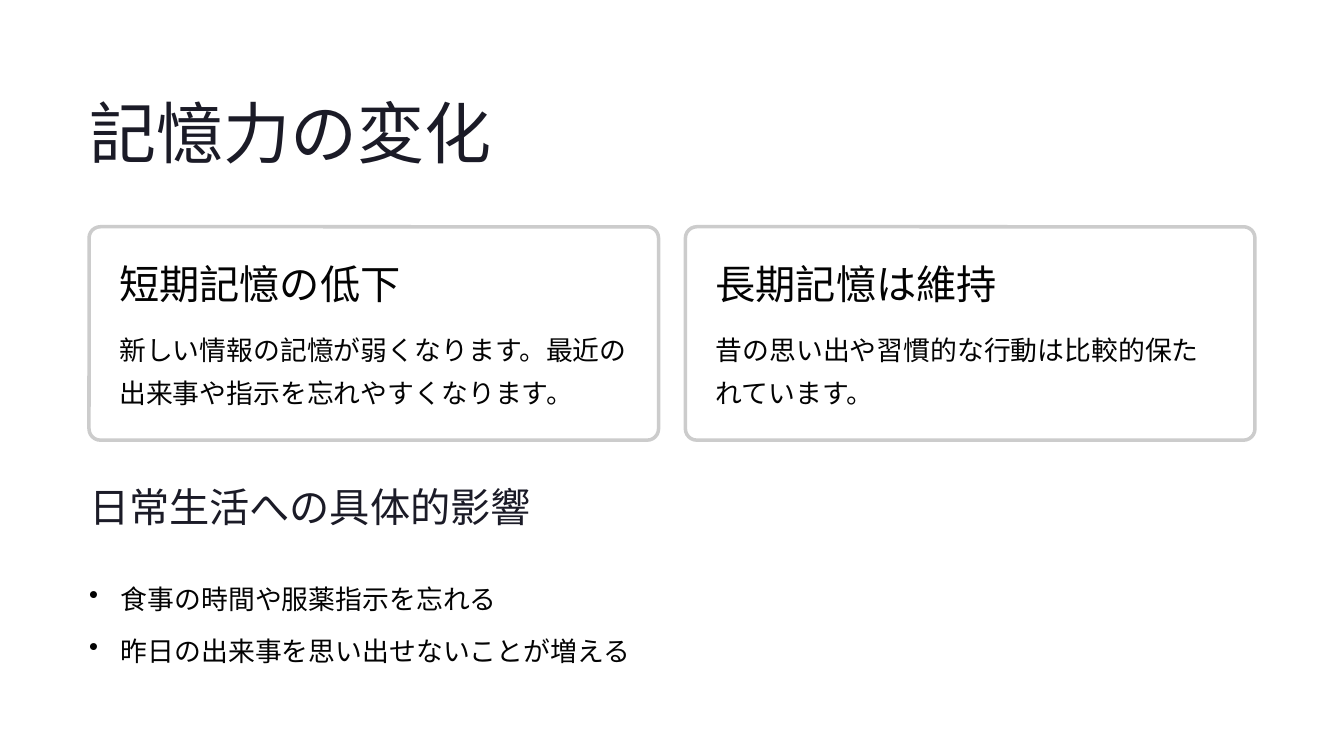
from dataclasses import dataclass

from lxml.etree import SubElement
from pptx import Presentation
from pptx.dml.color import RGBColor
from pptx.enum.shapes import MSO_SHAPE as Shape
from pptx.oxml.ns import qn
from pptx.slide import Slide
from pptx.util import Inches, Pt

NAVY, BLACK, WHITE, GREY = "1B1B27", "030303", "FFFFFF", "CCCCCC"
LEFT, PAD, INDENT = 1.06, 0.36, 0.38
CARD_W, CARD_H, CARD_TOP, CARD_STEP = 6.78, 2.54, 2.7, 7.1
BULLET_TOP, BULLET_STEP = 6.81, 0.62


@dataclass(frozen=True)
class Style:
    font: str
    size: float
    line: float
    color: str


@dataclass(frozen=True)
class Card:
    head: str
    body: str


TITLE = Style("Inter", 57.5, 72, NAVY)
SECTION = Style("Inter", 34.5, 43, NAVY)
HEAD = Style("Inter", 34.5, 43, BLACK)
BODY = Style("Lato", 23, 36.5, BLACK)

CARDS = [
    Card("短期記憶の低下",
         "新しい情報の記憶が弱くなります。最近の出来事や指示を忘れやすくなります。"),
    Card("長期記憶は維持",
         "昔の思い出や習慣的な行動は比較的保たれています。"),
]
EFFECTS = ["食事の時間や服薬指示を忘れる", "昨日の出来事を思い出せないことが増える"]


def rgb(color: str) -> RGBColor:
    return RGBColor.from_string(color)


def add_text(slide: Slide, text: str, style: Style, x: float, y: float,
             w: float, h: float, wrap: bool = False, bullet: bool = False) -> None:
    box = slide.shapes.add_textbox(Inches(x), Inches(y), Inches(w), Inches(h))
    frame = box.text_frame
    frame.margin_left = frame.margin_right = 0
    frame.margin_top = frame.margin_bottom = 0
    frame.word_wrap = wrap
    frame.text = text
    para = frame.paragraphs[0]
    para.line_spacing = Pt(style.line)
    font = para.runs[0].font
    font.name, font.size = style.font, Pt(style.size)
    font.color.rgb = rgb(style.color)
    if bullet:
        props = para._p.get_or_add_pPr()
        props.set("marL", str(Inches(INDENT)))
        props.set("indent", str(-Inches(INDENT)))
        SubElement(props, qn("a:buChar"), char="•")


def add_card(slide: Slide, card: Card, x: float) -> None:
    panel = slide.shapes.add_shape(
        Shape.ROUNDED_RECTANGLE, Inches(x), Inches(CARD_TOP),
        Inches(CARD_W), Inches(CARD_H))
    panel.adjustments[0] = 0.053
    panel.shadow.inherit = False
    panel.fill.solid()
    panel.fill.fore_color.rgb = rgb(WHITE)
    tint = panel._element.spPr.find(qn("a:solidFill")).find(qn("a:srgbClr"))
    SubElement(tint, qn("a:alpha"), val="95000")
    panel.line.color.rgb = rgb(GREY)
    panel.line.width = Pt(3)
    add_text(slide, card.head, HEAD, x + PAD, CARD_TOP + PAD, 4.81, 0.6)
    add_text(slide, card.body, BODY, x + PAD, CARD_TOP + 1.15,
             CARD_W - 2 * PAD, 1.03, wrap=True)


def main() -> None:
    deck = Presentation()
    deck.slide_width, deck.slide_height = Inches(16), Inches(9)
    slide = deck.slides.add_slide(deck.slide_layouts[6])
    add_text(slide, "記憶力の変化", TITLE, LEFT, 1.05, 8.02, 1)
    for i, card in enumerate(CARDS):
        add_card(slide, card, LEFT + i * CARD_STEP)
    add_text(slide, "日常生活への具体的影響", SECTION, LEFT, 5.72, 5.29, 0.6)
    for i, effect in enumerate(EFFECTS):
        add_text(slide, effect, BODY, LEFT, BULLET_TOP + i * BULLET_STEP,
                 13.89, 0.51, bullet=True)
    deck.save("out.pptx")


if __name__ == "__main__":
    main()
